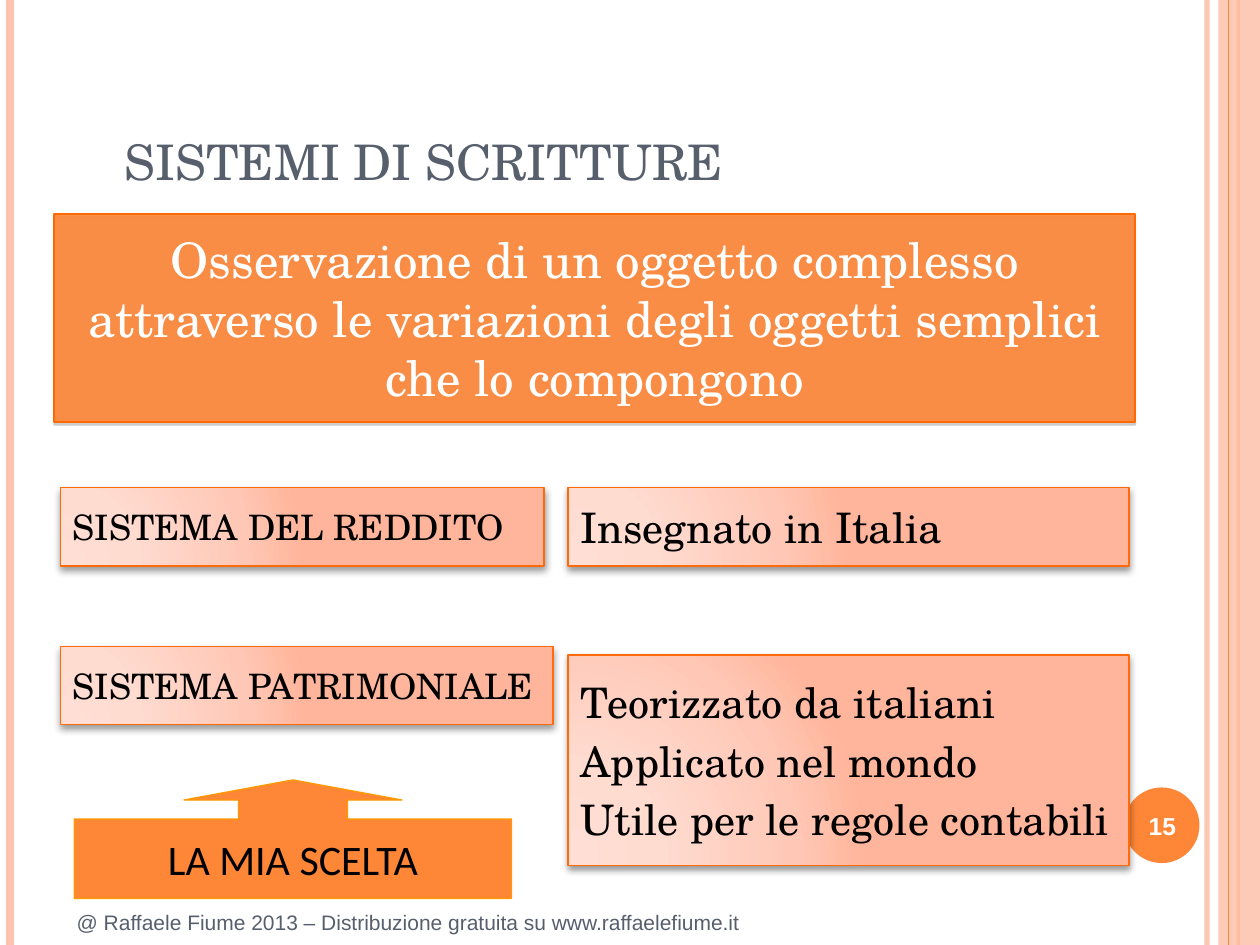
import pptx
import pptx.util
import pptx.dml.color
import pptx.enum.shapes
import pptx.enum.text
import pptx.oxml
import pptx.oxml.ns

SHAPE = pptx.enum.shapes.MSO_SHAPE
ALIGN = pptx.enum.text.PP_ALIGN
ANCHOR = pptx.enum.text.MSO_ANCHOR
WIDTH, HEIGHT = 10, 7.5
NAMESPACE = pptx.oxml.ns.nsdecls("a")
SERIF, SANS, LABEL = "TeX Gyre Schola", "Arial", "Calibri"

COLORS = {
    "orange": "FE8637", "peach": "FEC3AE", "slate": "575F6D", "white": "FFFFFF",
    "black": "000000", "band_edge": "FF6903", "card_edge": "FF6B0A",
    "callout_edge": "FF9900", "gray": "808080",
}
CARD_STOPS = [(0, "FFDED5"), (30, "FFDBD0"), (75, "FFC8B6"), (100, "FFB59B")]

LEFT_RAILS = [(9.58, "peach", 3, 93), (0.08, "peach", 4.5, 100), (9.83, "orange", 1.5, 100)]
RIGHT_RAIL = (9.75, "orange", 0.75, 100)
SIDE_LEFT = 9.67

TITLE = "SISTEMI DI SCRITTURE"
FOOTER = "@ Raffaele Fiume 2013 – Distribuzione gratuita su www.raffaelefiume.it"
NUMBER = "15"
DEFINITION = ("Osservazione di un oggetto complesso attraverso le variazioni "
              "degli oggetti semplici che lo compongono")
CHOICE = "LA MIA SCELTA"

COLUMN_LEFT, COLUMN_RIGHT = 0.48, 4.51
ROW_TOP, ROW_HEIGHT = 3.87, 0.62
CARDS = [
    ((COLUMN_LEFT, ROW_TOP, 3.84, ROW_HEIGHT), 20, ["SISTEMA DEL REDDITO"]),
    ((COLUMN_LEFT, 5.13, 3.91, ROW_HEIGHT), 20, ["SISTEMA PATRIMONIALE"]),
    ((COLUMN_RIGHT, 5.2, 4.45, 1.67), 24,
     ["Teorizzato da italiani", "Applicato nel mondo", "Utile per le regole contabili"]),
    ((COLUMN_RIGHT, ROW_TOP, 4.45, ROW_HEIGHT), 24, ["Insegnato in Italia"]),
]


def color(name):
    return pptx.dml.color.RGBColor.from_string(COLORS[name])


def inches(values):
    return [pptx.util.Inches(value) for value in values]


def set_alpha(fill_parent, percent):
    if percent < 100:
        tint = fill_parent.find(".//" + pptx.oxml.ns.qn("a:srgbClr"))
        tint.append(pptx.oxml.parse_xml(f'<a:alpha {NAMESPACE} val="{percent * 1000}"/>'))


def add_shadow(shape, name, percent, blur, distance):
    effects = shape._element.spPr.find(pptx.oxml.ns.qn("a:effectLst"))
    effects.append(pptx.oxml.parse_xml(
        f'<a:outerShdw {NAMESPACE} blurRad="{pptx.util.Pt(blur)}" '
        f'dist="{pptx.util.Pt(distance)}" dir="5400000" rotWithShape="0">'
        f'<a:srgbClr val="{COLORS[name]}"><a:alpha val="{percent * 1000}"/>'
        '</a:srgbClr></a:outerShdw>'))


def fill_card(shape):
    stops = "".join(f'<a:gs pos="{place * 1000}"><a:srgbClr val="{value}"/></a:gs>'
                    for place, value in CARD_STOPS)
    gradient = pptx.oxml.parse_xml(
        f'<a:gradFill {NAMESPACE} rotWithShape="1"><a:gsLst>{stops}</a:gsLst>'
        '<a:path path="circle"><a:fillToRect l="5000" t="100000" r="120000" b="10000"/>'
        '</a:path></a:gradFill>')
    shape._element.spPr.find(pptx.oxml.ns.qn("a:prstGeom")).addnext(gradient)


def add_rail(page, left, name, weight, opacity):
    rail = page.shapes.add_connector(
        pptx.enum.shapes.MSO_CONNECTOR.STRAIGHT, *inches((left, 0, left, HEIGHT)))
    rail.line.color.rgb = color(name)
    rail.line.width = pptx.util.Pt(weight)
    set_alpha(rail._element.spPr, opacity)
    rail._element.spPr.append(pptx.oxml.parse_xml(f"<a:effectLst {NAMESPACE}/>"))


def add_block(page, kind, frame, fill=None, opacity=100, edge=None, weight=1):
    block = page.shapes.add_shape(kind, *inches(frame))
    block.shadow.inherit = False
    if fill:
        block.fill.solid()
        block.fill.fore_color.rgb = color(fill)
        set_alpha(block._element.spPr, opacity)
    if edge:
        block.line.color.rgb = color(edge)
        block.line.width = pptx.util.Pt(weight)
    else:
        block.line.fill.background()
    return block


def write(box, lines, size, font, name, align=ALIGN.LEFT, anchor=ANCHOR.MIDDLE,
          bold=False, before=0.2):
    frame = box.text_frame
    frame.word_wrap = True
    frame.vertical_anchor = anchor
    for index, line in enumerate(lines):
        para = frame.add_paragraph() if index else frame.paragraphs[0]
        para.alignment = align
        para.space_before = pptx.util.Pt(round(size * before, 1))
        span = para.add_run()
        span.text = line
        span.font.size = pptx.util.Pt(size)
        span.font.name = font
        span.font.bold = bold
        span.font.color.rgb = color(name)


def add_text(page, frame, *content, **style):
    write(page.shapes.add_textbox(*inches(frame)), *content, **style)


def main():
    deck = pptx.Presentation()
    deck.slide_width, deck.slide_height = inches((WIDTH, HEIGHT))
    page = deck.slides.add_slide(deck.slide_layouts[6])

    for rail in LEFT_RAILS:
        add_rail(page, *rail)
    add_block(page, SHAPE.RECTANGLE, (SIDE_LEFT, 0, WIDTH - SIDE_LEFT, HEIGHT), "peach", 87)
    add_rail(page, *RIGHT_RAIL)
    add_block(page, SHAPE.OVAL, (8.92, 6.25, 0.6, 0.6), "orange")

    add_text(page, (0.51, 7.14, 8.19, 0.36), [FOOTER], 12, SANS, "slate")
    add_text(page, (0.89, 0.81, 8.75, 0.75), [TITLE], 28, SERIF, "slate",
             anchor=ANCHOR.BOTTOM, before=0)
    add_text(page, (8.89, 6.27, 0.67, 0.57), [NUMBER], 14, SANS, "white",
             align=ALIGN.CENTER, bold=True)

    band = add_block(page, SHAPE.RECTANGLE, (0.43, 1.7, 8.58, 1.65), "orange", 90, "band_edge")
    add_shadow(band, "gray", 42, 0, 1.6)
    write(band, [DEFINITION], 28, SERIF, "white", align=ALIGN.CENTER)

    for frame, size, lines in CARDS:
        card = add_block(page, SHAPE.RECTANGLE, frame, edge="card_edge")
        fill_card(card)
        add_shadow(card, "black", 40, 4, 2)
        write(card, lines, size, SERIF, "black")

    callout = add_block(page, SHAPE.UP_ARROW_CALLOUT, (0.59, 6.19, 3.47, 0.94),
                        "orange", edge="callout_edge", weight=0.75)
    for index, share in enumerate((0.92, 0.92, 0.17, 0.67)):
        callout.adjustments[index] = share
    write(callout, [CHOICE], 24, LABEL, "black", align=ALIGN.CENTER, before=0.25)

    deck.save("out.pptx")


if __name__ == "__main__":
    main()
